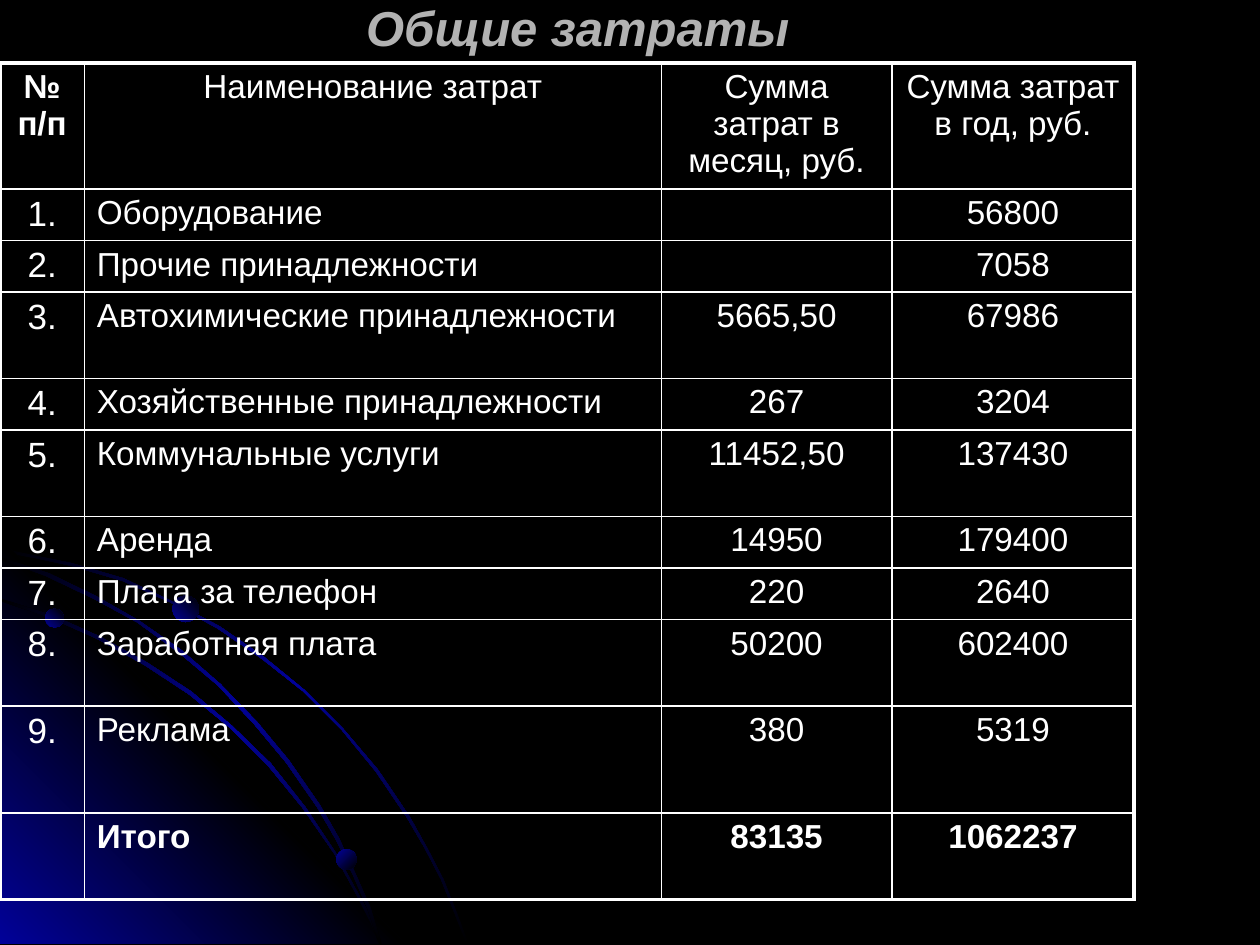
from pptx import Presentation
from pptx.dml.color import RGBColor
from pptx.enum.shapes import MSO_SHAPE as Shape
from pptx.enum.text import MSO_ANCHOR as Anchor, MSO_AUTO_SIZE as AutoSize, PP_ALIGN as Align
from pptx.oxml import parse_xml
from pptx.oxml.ns import nsdecls
from pptx.util import Cm, Pt

COLORS = {"black": "000000", "blue": "010199", "white": "FFFFFF", "gray": "B2B2B2"}
FONT = "Arial"
UNIT = Cm(2.54) / 100  # outline points are hundredths of an inch

# Outlines of the corner decoration
OUTER_ARC = [
    (57, 447), (28, 441), (0, 435), (0, 438), (28, 443), (56, 449), (97, 461), (135, 478),
    (173, 499), (208, 523), (241, 549), (271, 579), (298, 612), (323, 649), (337, 673),
    (350, 698), (360, 723), (370, 749), (372, 749), (362, 723), (352, 698), (339, 673),
    (325, 648), (300, 611), (272, 578), (242, 548), (209, 521), (174, 497), (136, 477),
    (98, 459)]
CORNER = [(322, 749), (0, 749), (0, 427)]
INNER_ARC = [
    (285, 714), (294, 732), (301, 749), (303, 749), (296, 730), (286, 712), (266, 676),
    (242, 640), (215, 606), (184, 576), (152, 549), (117, 526), (79, 505), (41, 488),
    (0, 475), (0, 477), (39, 490), (77, 507), (115, 528), (150, 551), (183, 578),
    (213, 608), (240, 641), (265, 677)]
MIDDLE_ARC = [
    (0, 442), (0, 444), (36, 457), (74, 475), (109, 494), (142, 518), (173, 544), (202, 575),
    (227, 605), (252, 641), (267, 667), (280, 694), (292, 722), (301, 749), (303, 749),
    (294, 720), (282, 693), (269, 665), (254, 639), (229, 603), (204, 573), (175, 543),
    (144, 516), (111, 493), (76, 473), (39, 455)]

# Left, top, diameter (cm) and gradient angle
DOTS = [(0.91, 12.27, 0.38, 315), (6.78, 17.12, 0.41, 45), (3.48, 12.01, 0.53, 315)]

# Cost table
COLUMN_WIDTHS = [1.7, 11.63, 4.65, 4.88]
LOW, TALL = 1.04, 1.74
ROW_HEIGHTS = [2.54, LOW, LOW, TALL, LOW, TALL, LOW, LOW, TALL, 2.16, TALL]
HEADER = ["№ п/п", "Наименование затрат", "Сумма затрат в месяц, руб.", "Сумма затрат в год, руб."]
COSTS = [
    ("Оборудование", "", "56800"),
    ("Прочие принадлежности", "", "7058"),
    ("Автохимические принадлежности", "5665,50", "67986"),
    ("Хозяйственные принадлежности", "267", "3204"),
    ("Коммунальные услуги", "11452,50", "137430"),
    ("Аренда", "14950", "179400"),
    ("Плата за телефон", "220", "2640"),
    ("Заработная плата", "50200", "602400"),
    ("Реклама", "380", "5319"),
]
TOTAL = ["", "Итого", "83135", "1062237"]


def write_text(frame, text, size=19, color="white", bold=False, italic=False, align=Align.CENTER):
    paragraph = frame.paragraphs[0]
    paragraph.alignment = align
    run = paragraph.add_run()
    run.text = text
    font = run.font
    font.name, font.size, font.bold, font.italic = FONT, Pt(size), bold, italic
    font.color.rgb = RGBColor.from_string(COLORS[color])


class SlideBuilder:
    def __init__(self, presentation):
        self.slide = presentation.slides.add_slide(presentation.slide_layouts[5])
        self.shapes = self.slide.shapes

    def background(self, color):
        fill = self.slide.background.fill
        fill.solid()
        fill.fore_color.rgb = RGBColor.from_string(COLORS[color])

    def title(self, text, left, top, width, height):
        title = self.shapes.title
        title.left, title.top, title.width, title.height = Cm(left), Cm(top), Cm(width), Cm(height)
        frame = title.text_frame
        frame.auto_size = AutoSize.NONE
        frame.vertical_anchor = Anchor.MIDDLE
        frame.margin_top = frame.margin_bottom = 0
        write_text(frame, text, size=28, color="gray", bold=True, italic=True)

    def gradient(self, shape, colors, angle):
        shape.shadow.inherit = False
        shape.line.fill.background()
        shape.fill.background()
        step = 100000 // (len(colors) - 1)
        stops = "".join(
            f'<a:gs pos="{index * step}"><a:srgbClr val="{COLORS[color]}"/></a:gs>'
            for index, color in enumerate(colors))
        properties = shape.element.spPr
        no_fill = properties.find("{http://schemas.openxmlformats.org/drawingml/2006/main}noFill")
        properties.replace(no_fill, parse_xml(
            f'<a:gradFill {nsdecls("a")} rotWithShape="1"><a:gsLst>{stops}</a:gsLst>'
            f'<a:lin ang="{angle * 60000}" scaled="0"/></a:gradFill>'))

    def outline(self, points, colors, angle):
        builder = self.shapes.build_freeform(*points[0], scale=UNIT)
        builder.add_line_segments(points[1:], close=True)
        self.gradient(builder.convert_to_shape(), colors, angle)

    def dot(self, left, top, diameter, angle):
        shape = self.shapes.add_shape(Shape.OVAL, Cm(left), Cm(top), Cm(diameter), Cm(diameter))
        self.gradient(shape, ["blue", "black"], angle)

    def borders(self, cell, widths):
        properties = cell._tc.get_or_add_tcPr()
        for side, width in widths.items():
            properties.append(parse_xml(
                f'<a:ln{side} {nsdecls("a")} w="{Pt(width)}"><a:solidFill>'
                f'<a:srgbClr val="{COLORS["white"]}"/></a:solidFill></a:ln{side}>'))

    def table(self, rows, left, top):
        frame = self.shapes.add_table(
            len(rows), len(COLUMN_WIDTHS), Cm(left), Cm(top),
            Cm(sum(COLUMN_WIDTHS)), Cm(sum(ROW_HEIGHTS)))
        table = frame.table
        table.first_row = table.horz_banding = False
        for column, width in zip(table.columns, COLUMN_WIDTHS):
            column.width = Cm(width)
        for row, height in zip(table.rows, ROW_HEIGHTS):
            row.height = Cm(height)

        last_row, last_column = len(rows) - 1, len(COLUMN_WIDTHS) - 1
        for r, texts in enumerate(rows):
            for c, text in enumerate(texts):
                cell = table.cell(r, c)
                cell.margin_top = cell.margin_bottom = Cm(0.11)
                edges = {"L": c == 0, "R": c == last_column, "T": r == 0, "B": r == last_row}
                self.borders(cell, {side: 2.25 if outer else 1 for side, outer in edges.items()})
                cell.fill.background()
                if text:
                    write_text(
                        cell.text_frame, text,
                        size=20 if c == 0 and r > 0 else 19,
                        bold=r == last_row or (r == 0 and c == 0),
                        align=Align.LEFT if c == 1 and r > 0 else Align.CENTER)


def main():
    presentation = Presentation()
    presentation.slide_width, presentation.slide_height = Cm(25.4), Cm(19.05)
    builder = SlideBuilder(presentation)
    builder.background("black")

    # Corner decoration
    glow = ["black", "blue", "black"]
    builder.outline(OUTER_ARC, glow, 45)
    builder.outline(CORNER, ["blue", "black", "blue"], 315)
    builder.outline(INNER_ARC, glow, 45)
    builder.outline(MIDDLE_ARC, glow, 45)
    for dot in DOTS:
        builder.dot(*dot)

    # Title and table
    builder.title("Общие затраты", 1.27, 0, 20.75, 1.07)
    numbered = [[f"{number}.", *cost] for number, cost in enumerate(COSTS, 1)]
    builder.table([HEADER, *numbered, TOTAL], 0, 1.27)
    presentation.save("out.pptx")


if __name__ == "__main__":
    main()
